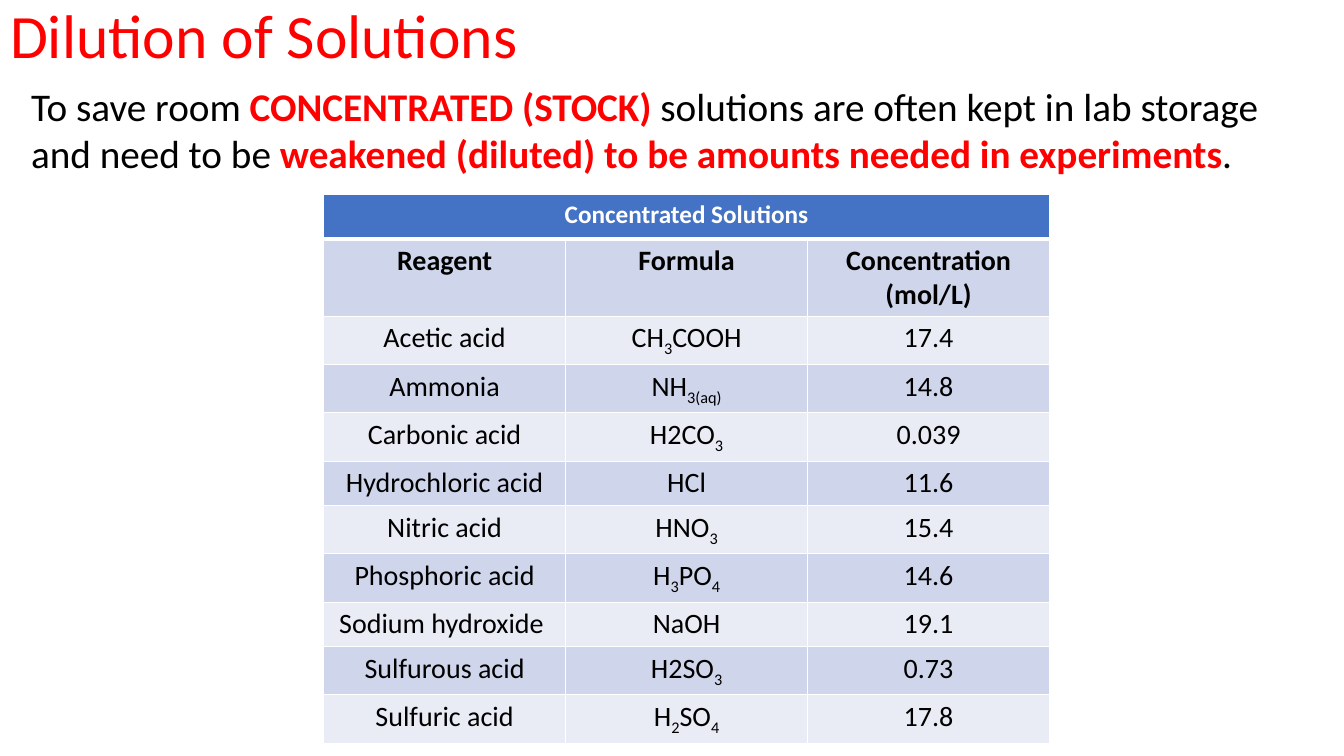
from lxml import etree
from pptx import Presentation
from pptx.dml.color import RGBColor
from pptx.enum.text import MSO_ANCHOR as Anchor, MSO_AUTO_SIZE as AutoSize, PP_ALIGN as Align
from pptx.oxml.ns import qn
from pptx.util import Inches, Pt

RED = RGBColor(0xFF, 0x00, 0x00)
BLACK = RGBColor(0x00, 0x00, 0x00)
WHITE = RGBColor(0xFF, 0xFF, 0xFF)
HEADER_BLUE = RGBColor(0x44, 0x72, 0xC4)
BANDS = [RGBColor(0xCF, 0xD5, 0xEA), RGBColor(0xE9, 0xEB, 0xF5)]

# Content
TITLE = "Dilution of Solutions"
INTRO = [  # (text, highlighted)
    ("To save room ", False),
    ("CONCENTRATED (STOCK) ", True),
    ("solutions are often kept in lab storage and need to be ", False),
    ("weakened (diluted) to be amounts needed in experiments", True),
    (".", False),
]
TABLE_TITLE = "Concentrated Solutions"
HEADINGS = ("Reagent", "Formula", "Concentration (mol/L)")
REAGENTS = [  # formula parts alternate between normal text and subscript
    ("Acetic acid", ("CH", "3", "COOH"), "17.4"),
    ("Ammonia", ("NH", "3(aq)"), "14.8"),
    ("Carbonic acid", ("H2CO", "3"), "0.039"),
    ("Hydrochloric acid", ("HCl",), "11.6"),
    ("Nitric acid", ("HNO", "3"), "15.4"),
    ("Phosphoric acid", ("H", "3", "PO", "4"), "14.6"),
    ("Sodium hydroxide ", ("NaOH",), "19.1"),
    ("Sulfurous acid", ("H2SO", "3"), "0.73"),
    ("Sulfuric acid", ("H", "2", "SO", "4"), "17.8"),
]
COLUMN_WIDTH = 2.4
ROW_HEIGHTS = [0.44, 0.76] + [0.44] * 8 + [0.31]


def add_text(paragraph, text, size=20, color=BLACK, bold=False, subscript=False):
    run = paragraph.add_run()
    run.text = text
    run.font.name = "Calibri"
    run.font.size = Pt(size)
    run.font.bold = bold
    run.font.color.rgb = color
    if subscript:
        run._r.get_or_add_rPr().set("baseline", "-25000")


def set_borders(cell, **widths):
    """Give the cell white edges; widths are in points by side letter."""
    properties = cell._tc.get_or_add_tcPr()
    for position, side in enumerate("LRTB"):
        line = etree.Element(qn(f"a:ln{side}"), w=str(Pt(widths.get(side, 1))))
        fill = etree.SubElement(line, qn("a:solidFill"))
        etree.SubElement(fill, qn("a:srgbClr"), val=str(WHITE))
        properties.insert(position, line)


def fill_cell(cell, parts, fill, bottom=1, **text_format):
    cell.fill.solid()
    cell.fill.fore_color.rgb = fill
    set_borders(cell, B=bottom)
    paragraph = cell.text_frame.paragraphs[0]
    paragraph.alignment = Align.CENTER
    for index, part in enumerate(parts):
        add_text(paragraph, part, subscript=index % 2 == 1, **text_format)


def main():
    deck = Presentation()
    deck.slide_width, deck.slide_height = Inches(13.33), Inches(7.5)
    slide = deck.slides.add_slide(deck.slide_layouts[5])

    # Title
    title = slide.shapes.title
    title.left, title.top = Inches(0), Inches(0)
    title.width, title.height = Inches(12.62), Inches(0.77)
    title.text_frame.vertical_anchor = Anchor.MIDDLE
    heading = title.text_frame.paragraphs[0]
    heading.alignment = Align.LEFT
    heading.line_spacing = 0.9
    add_text(heading, TITLE, size=44, color=RED)

    # Introduction
    intro = slide.shapes.add_textbox(Inches(0.21), Inches(0.77), Inches(12.92), Inches(1.04))
    intro.text_frame.word_wrap = True
    intro.text_frame.auto_size = AutoSize.SHAPE_TO_FIT_TEXT
    for text, highlighted in INTRO:
        add_text(intro.text_frame.paragraphs[0], text, size=28,
                 color=RED if highlighted else BLACK, bold=highlighted)

    # Reagent table
    table = slide.shapes.add_table(
        len(ROW_HEIGHTS), len(HEADINGS), Inches(3.21), Inches(1.93),
        Inches(COLUMN_WIDTH * len(HEADINGS)), Inches(sum(ROW_HEIGHTS))).table
    for column in table.columns:
        column.width = Inches(COLUMN_WIDTH)
    for row, height in zip(table.rows, ROW_HEIGHTS):
        row.height = Inches(height)

    table.cell(0, 0).merge(table.cell(0, len(HEADINGS) - 1))
    for column in range(len(HEADINGS)):
        fill_cell(table.cell(0, column), [TABLE_TITLE] if column == 0 else [],
                  HEADER_BLUE, bottom=3, size=18, color=WHITE, bold=True)

    for index, values in enumerate([HEADINGS] + REAGENTS):
        for column, value in enumerate(values):
            parts = [value] if isinstance(value, str) else value
            fill_cell(table.cell(index + 1, column), parts, BANDS[index % 2], bold=index == 0)

    deck.save("out.pptx")


if __name__ == "__main__":
    main()
